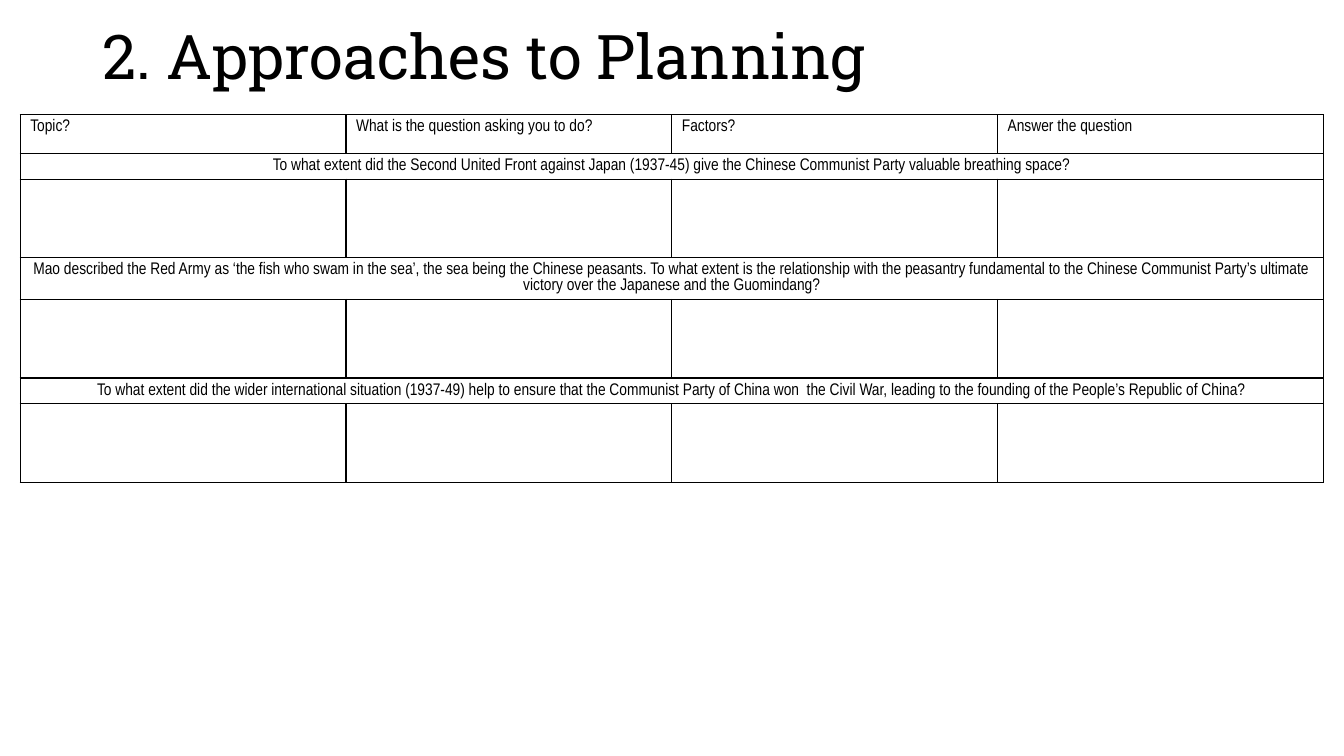
"""Builds a planning slide with a table of essay questions."""
from lxml import etree
from pptx import Presentation
from pptx.dml.color import RGBColor
from pptx.enum.text import MSO_ANCHOR, PP_ALIGN
from pptx.oxml.ns import qn
from pptx.util import Cm, Pt

MIDDLE = MSO_ANCHOR.MIDDLE
LEFT, CENTER = PP_ALIGN.LEFT, PP_ALIGN.CENTER
TITLE_ONLY = 5
COLORS = {"ink": "000000", "paper": "FFFFFF"}
TITLE_FONT, TABLE_FONT = "Roboto Slab", "Arial Narrow"
HEADINGS = ["Topic?", "What is the question asking you to do?", "Factors?", "Answer the question"]
QUESTIONS = [
    "To what extent did the Second United Front against Japan (1937-45) give the Chinese "
    "Communist Party valuable breathing space?",
    "Mao described the Red Army as ‘the fish who swam in the sea’, the sea being the Chinese "
    "peasants. To what extent is the relationship with the peasantry fundamental to the Chinese "
    "Communist Party’s ultimate victory over the Japanese and the Guomindang?",
    "To what extent did the wider international situation (1937-49) help to ensure that the "
    "Communist Party of China won  the Civil War, leading to the founding of the People’s "
    "Republic of China?",
]
QUESTION_HEIGHTS = [0.65, 1.04, 0.65]
HEADING_HEIGHT, ANSWER_HEIGHT = 0.97, 1.98
TABLE_WIDTH = 32.84


def write_text(frame, text, font, size, align=LEFT):
    """Write one paragraph in the given font, size and alignment."""
    frame.text = text
    para = frame.paragraphs[0]
    para.alignment = align
    for span in para.runs:
        span.font.name = font
        span.font.size = Pt(size)
        span.font.color.rgb = RGBColor.from_string(COLORS["ink"])


def style_cell(cell):
    """Give a cell a plain fill and a thin line on every side."""
    properties = cell._tc.get_or_add_tcPr()
    for side in ("lnL", "lnR", "lnT", "lnB"):
        line = etree.SubElement(properties, qn(f"a:{side}"), w=str(Pt(1)))
        fill = etree.SubElement(line, qn("a:solidFill"))
        etree.SubElement(fill, qn("a:srgbClr"), val=COLORS["ink"])
    cell.fill.solid()
    cell.fill.fore_color.rgb = RGBColor.from_string(COLORS["paper"])


def add_title(page, text):
    """Place and format the title."""
    title = page.shapes.title
    title.left, title.top, title.width, title.height = Cm(2.33), Cm(-0.33), Cm(29.21), Cm(3.68)
    title.text_frame.vertical_anchor = MIDDLE
    write_text(title.text_frame, text, TITLE_FONT, 44)
    title.text_frame.paragraphs[0].line_spacing = 0.9


def add_planning_table(page):
    """Add headings, then each question above a row of empty answers."""
    heights = [HEADING_HEIGHT]
    for height in QUESTION_HEIGHTS:
        heights += [height, ANSWER_HEIGHT]
    table = page.shapes.add_table(len(heights), len(HEADINGS), Cm(0.51), Cm(2.89),
                                  Cm(TABLE_WIDTH), Cm(sum(heights))).table
    table.first_row = table.horz_banding = False
    for row, height in zip(table.rows, heights):
        row.height = Cm(height)
    for cell in table.iter_cells():
        style_cell(cell)
    for column, heading in enumerate(HEADINGS):
        write_text(table.cell(0, column).text_frame, heading, TABLE_FONT, 12)
    for index, question in enumerate(QUESTIONS):
        row = 1 + 2 * index
        cell = table.cell(row, 0)
        cell.merge(table.cell(row, len(HEADINGS) - 1))
        write_text(cell.text_frame, question, TABLE_FONT, 12, CENTER)


def main():
    """Build and save the deck."""
    deck = Presentation()
    deck.slide_width, deck.slide_height = Cm(33.87), Cm(19.05)
    page = deck.slides.add_slide(deck.slide_layouts[TITLE_ONLY])
    add_title(page, "2. Approaches to Planning")
    add_planning_table(page)
    deck.save("out.pptx")


if __name__ == "__main__":
    main()
